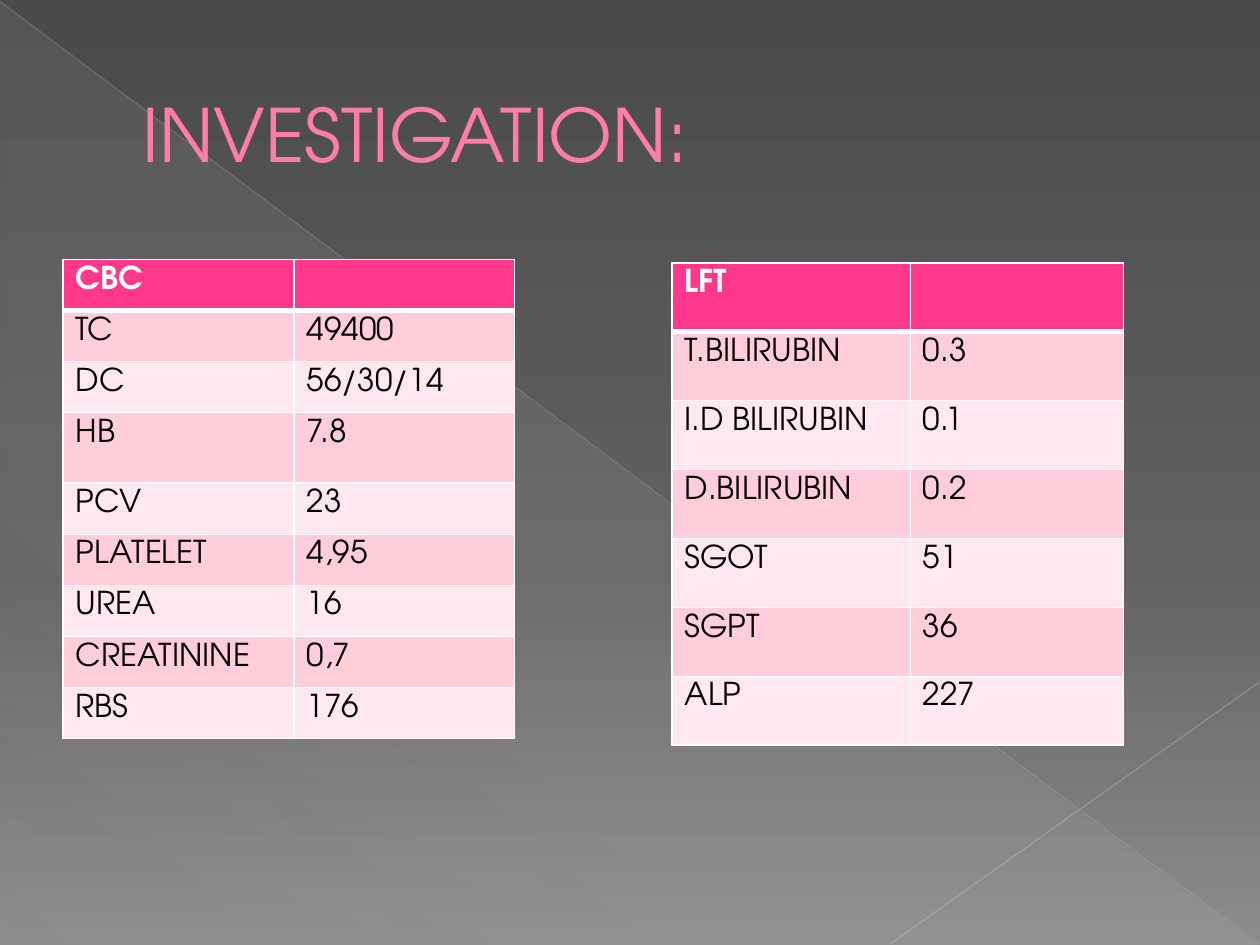
from lxml import etree
from pptx import Presentation
from pptx.dml.color import RGBColor
from pptx.enum.shapes import MSO_CONNECTOR, MSO_SHAPE
from pptx.enum.text import MSO_ANCHOR, PP_ALIGN
from pptx.oxml.ns import qn
from pptx.util import Cm, Pt

STRAIGHT = MSO_CONNECTOR.STRAIGHT
RIGHT_TRIANGLE = MSO_SHAPE.RIGHT_TRIANGLE
MIDDLE, LEFT = MSO_ANCHOR.MIDDLE, PP_ALIGN.LEFT
FONT = "TeX Gyre Adventor"
TITLE_ONLY = 5

# Content
TITLE = "INVESTIGATION:"
PANELS = [
    {"at": (1.27, 5.23), "columns": (4.66, 4.44), "row": 1.03, "tall": {3: 1.42},
     "rows": [("CBC", ""), ("TC", "49400"), ("DC", "56/30/14"), ("HB", "7.8"),
              ("PCV", "23"), ("PLATELET", "4,95"), ("UREA", "16"),
              ("CREATININE", "0,7"), ("RBS", "176")]},
    {"at": (13.55, 5.3), "columns": (4.8, 4.3), "row": 1.39, "tall": {},
     "rows": [("LFT", ""), ("T.BILIRUBIN", "0.3"), ("I.D BILIRUBIN", "0.1"),
              ("D.BILIRUBIN", "0.2"), ("SGOT", "51"), ("SGPT", "36"),
              ("ALP", "227")]},
]
COLORS = {"title": "FF7DA7", "title_edge": "B12761", "header": "FF388C",
          "odd": "FFCEDA", "even": "FFE8EE", "white": "FFFFFF", "text": "000000",
          "diagonal": "BFBFBF", "corner": "C6C6C6"}
# Gradient stops: position %, colour, opacity %
BACKGROUND = [(0, "4A4A4A", 100), (60, "626262", 100), (100, "8C8C8C", 100)]
SHEEN = [(0, "D2D2D2", 10), (70, "D2D2D2", 8), (100, "D2D2D2", 1)]
# Thin lines: start, end, colour, width, opacity %
RAYS = [((0, 0.03), (25.37, 19.02), "diagonal", 0.39, 35),
        ((25.4, 13.74), (17.96, 19.02), "corner", 0.47, 45)]


def add_color(parent, color, opacity=100):
    node = etree.SubElement(parent, qn("a:srgbClr"), val=color)
    if opacity < 100:
        etree.SubElement(node, qn("a:alpha"), val=str(opacity * 1000))


def set_gradient(fill, holder, stops, angle):
    fill.gradient()
    gradient = next(holder.iter(qn("a:gradFill")))
    for child in list(gradient):
        gradient.remove(child)
    stop_list = etree.SubElement(gradient, qn("a:gsLst"))
    for position, color, opacity in stops:
        stop = etree.SubElement(stop_list, qn("a:gs"), pos=str(position * 1000))
        add_color(stop, color, opacity)
    etree.SubElement(gradient, qn("a:lin"), ang=str(angle * 60000), scaled="0")


def add_line(parent, tag, color, width):
    line = etree.SubElement(parent, qn(tag), w=str(Pt(width)))
    add_color(etree.SubElement(line, qn("a:solidFill")), color)
    return line


def write(frame, text, *, size, color, bold=False):
    frame.word_wrap = True
    paragraph = frame.paragraphs[0]
    paragraph.alignment = LEFT
    paragraph.font.size = Pt(size)
    run = paragraph.add_run()
    run.text = text
    run.font.name, run.font.size, run.font.bold = FONT, Pt(size), bold
    run.font.color.rgb = RGBColor.from_string(COLORS[color])
    return run


def add_panel(slide, panel):
    rows, columns = panel["rows"], panel["columns"]
    heights = [panel["tall"].get(i, panel["row"]) for i in range(len(rows))]
    left, top = panel["at"]
    table = slide.shapes.add_table(len(rows), len(columns), Cm(left), Cm(top),
                                   Cm(sum(columns)), Cm(sum(heights))).table
    for column, width in zip(table.columns, columns):
        column.width = Cm(width)
    for i, (values, height) in enumerate(zip(rows, heights)):
        table.rows[i].height = Cm(height)
        header = i == 0
        shade = "header" if header else ("even", "odd")[i % 2]
        edges = {"L": 1, "R": 1, "T": 3 if i == 1 else 1, "B": 3 if header else 1}
        for j, value in enumerate(values):
            cell = table.cell(i, j)
            properties = cell._tc.get_or_add_tcPr()
            for side, width in edges.items():
                add_line(properties, f"a:ln{side}", COLORS["white"], width)
            cell.fill.solid()
            cell.fill.fore_color.rgb = RGBColor.from_string(COLORS[shade])
            if value:
                write(cell.text_frame, value, size=18, bold=header,
                      color="white" if header else "text")


def main():
    prs = Presentation()
    prs.slide_width, prs.slide_height = Cm(25.4), Cm(19.05)
    slide = prs.slides.add_slide(prs.slide_layouts[TITLE_ONLY])

    # Backdrop
    set_gradient(slide.background.fill, slide._element, BACKGROUND, 90)
    sheen = slide.shapes.add_shape(RIGHT_TRIANGLE, Cm(0.02), Cm(0.04), Cm(25.35), Cm(19))
    sheen.shadow.inherit = False
    sheen.line.fill.background()
    set_gradient(sheen.fill, sheen._element, SHEEN, 133)
    for start, end, color, width, opacity in RAYS:
        ray = slide.shapes.add_connector(STRAIGHT, *map(Cm, start + end))
        ray.line.width = Pt(width)
        ray.line.color.rgb = RGBColor.from_string(COLORS[color])
        ray_color = next(ray._element.spPr.iter(qn("a:srgbClr")))
        etree.SubElement(ray_color, qn("a:alpha"), val=str(opacity * 1000))
        etree.SubElement(ray._element.spPr, qn("a:effectLst"))

    # Title, in front of the backdrop
    title = slide.shapes.title
    title.left, title.top, title.width, title.height = map(Cm, (1.27, 0.74, 22.86, 3.89))
    slide.shapes._spTree.append(title._element)
    title.text_frame.vertical_anchor = MIDDLE
    heading = write(title.text_frame, TITLE, size=42, color="title")
    indent = title.text_frame.paragraphs[0]._p.get_or_add_pPr()
    indent.set("marL", str(Cm(1.35)))
    indent.set("indent", "0")
    run_properties = heading._r.get_or_add_rPr()
    run_properties.insert(0, add_line(run_properties, "a:ln", COLORS["title_edge"], 0.5))

    # Result tables
    for panel in PANELS:
        add_panel(slide, panel)

    prs.save("out.pptx")


if __name__ == "__main__":
    main()
